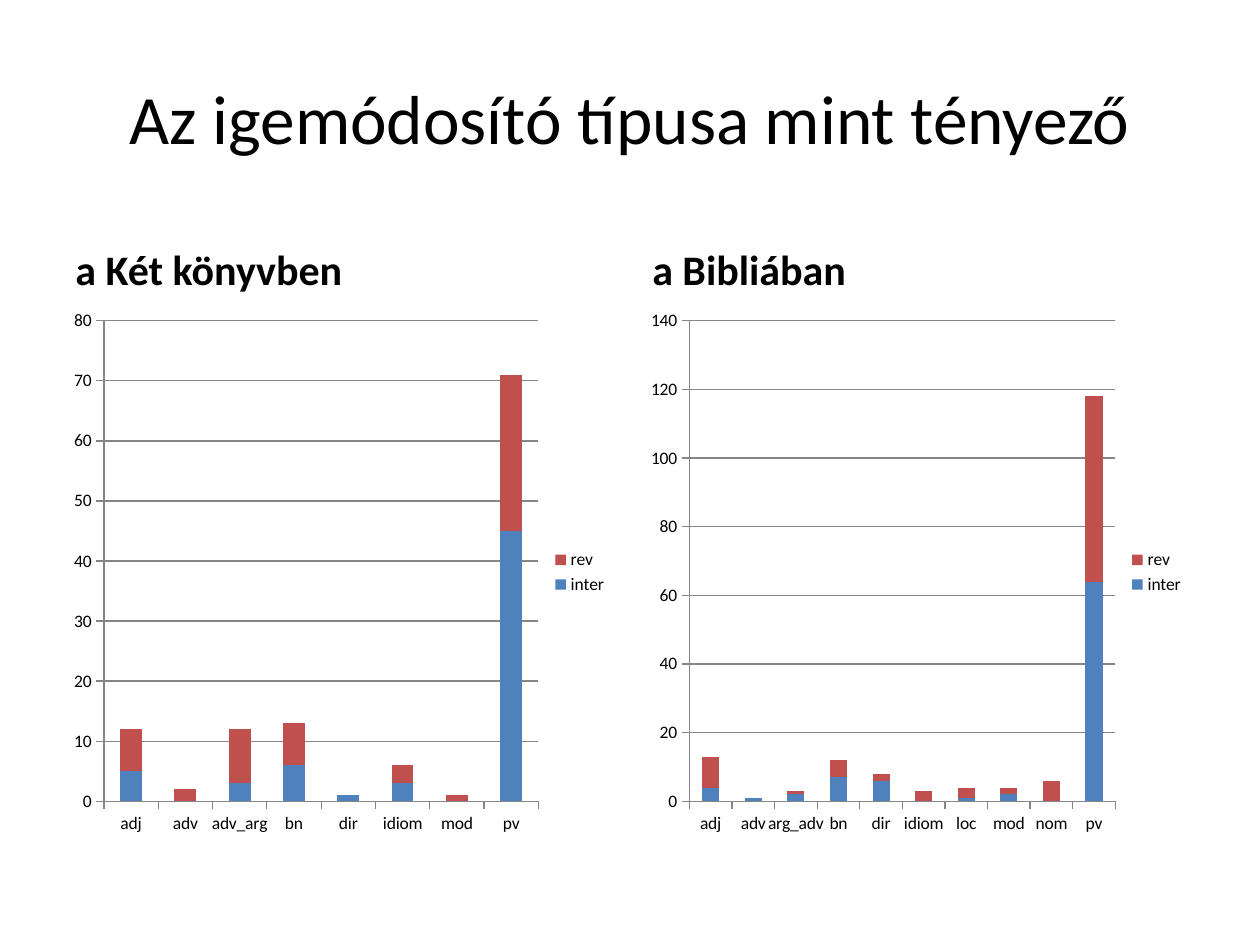
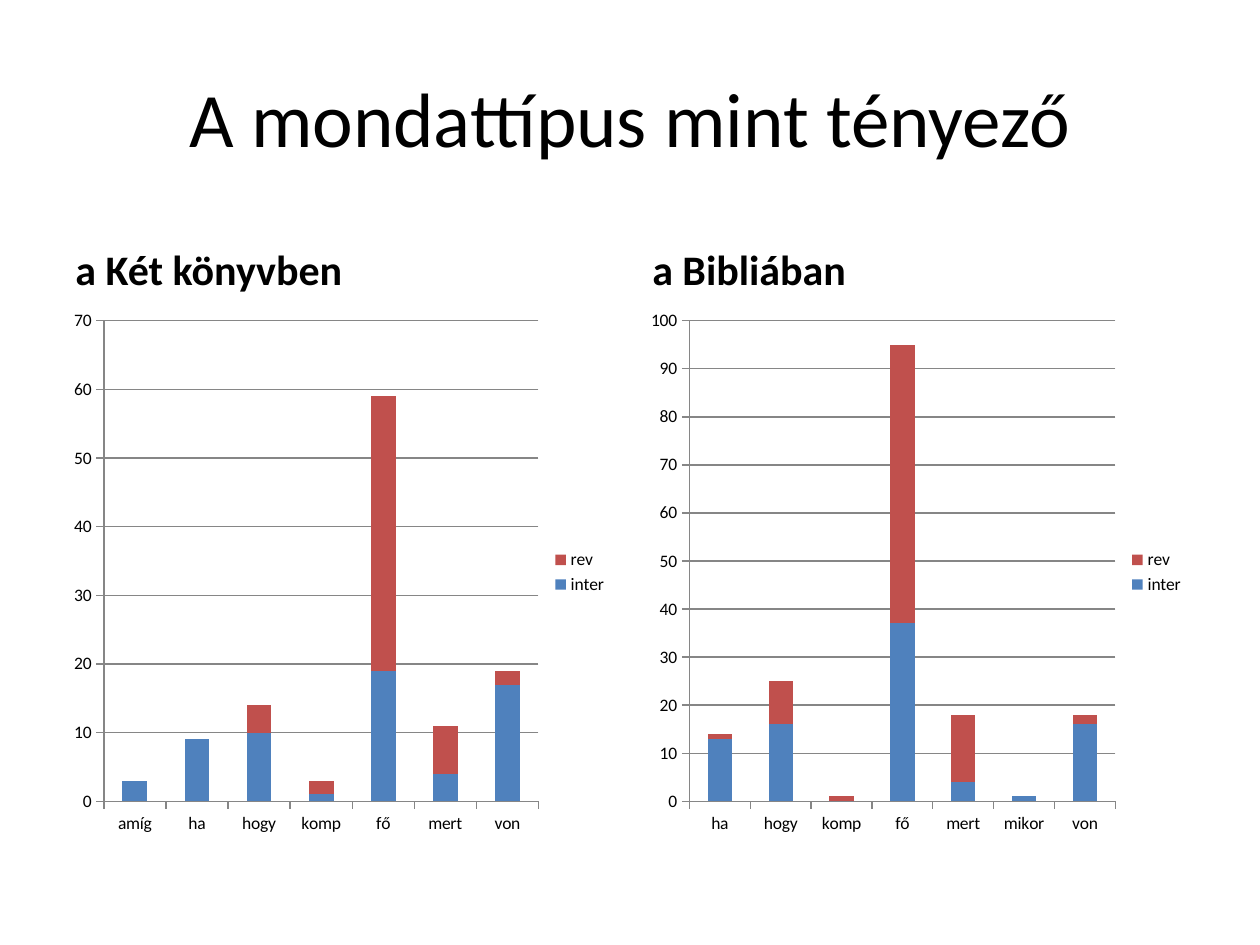
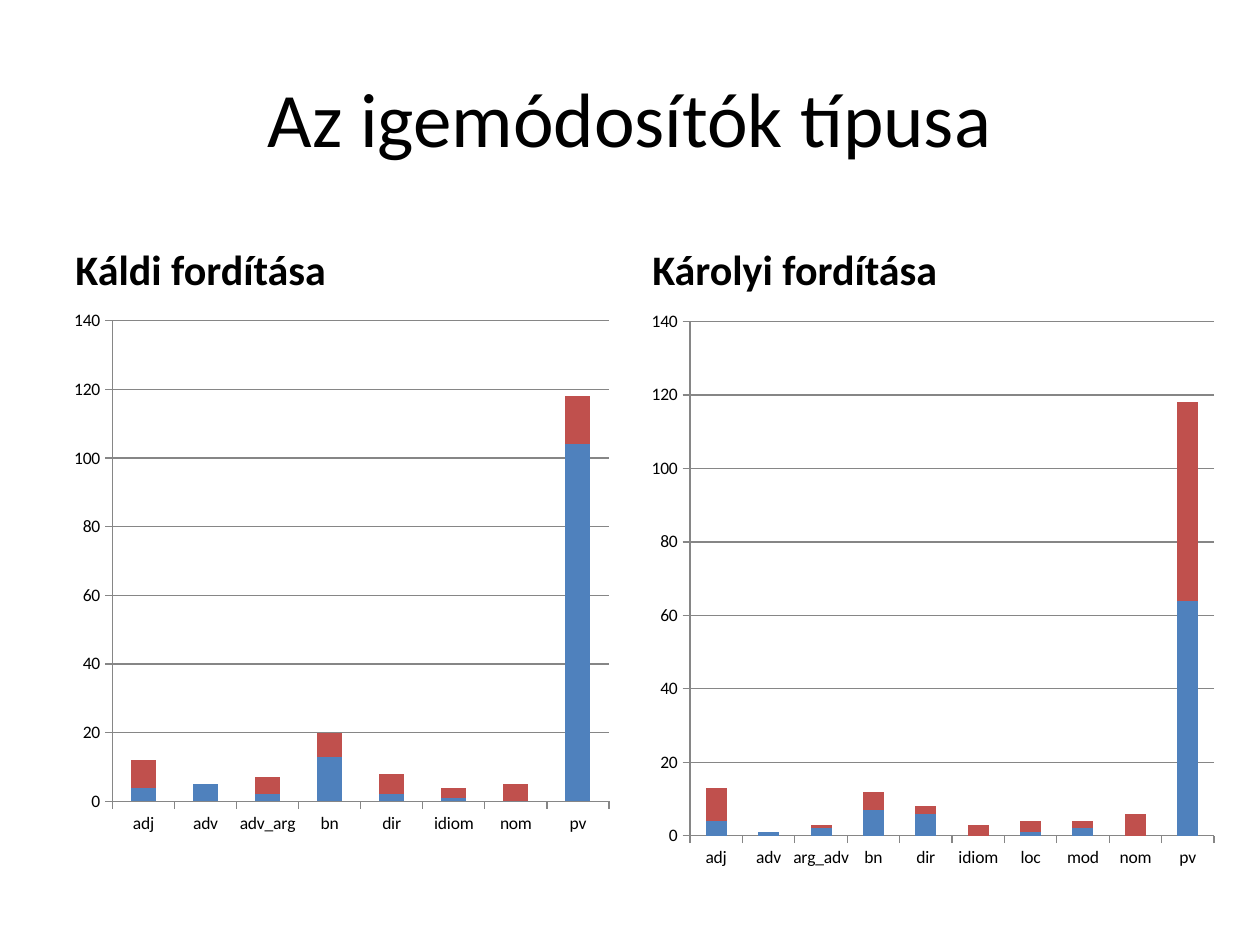
from collections import namedtuple

from pptx import Presentation
from pptx.chart.data import CategoryChartData
from pptx.dml.color import RGBColor
from pptx.enum.chart import XL_CHART_TYPE, XL_LEGEND_POSITION, XL_TICK_MARK
from pptx.enum.text import MSO_ANCHOR, PP_ALIGN
from pptx.util import Cm, Pt

STACKED = XL_CHART_TYPE.COLUMN_STACKED
LEGEND_RIGHT = XL_LEGEND_POSITION.RIGHT
TICK_OUT, TICK_NONE = XL_TICK_MARK.OUTSIDE, XL_TICK_MARK.NONE
MIDDLE, BOTTOM = MSO_ANCHOR.MIDDLE, MSO_ANCHOR.BOTTOM
LEFT, CENTER = PP_ALIGN.LEFT, PP_ALIGN.CENTER

FONT = "Calibri"
COLORS = {"text": "000000", "axis": "868686", "first": "4F81BD", "second": "C0504D"}

Box = namedtuple("Box", "left top width height")
Panel = namedtuple("Panel", "heading categories first second box")

SLIDE_WIDTH, SLIDE_HEIGHT = 25.4, 19.05
MARGIN = 1.27
COLUMN_WIDTH = 11.23
HEADING_HEIGHT = 1.78
TITLE_BOX = Box(MARGIN, 0.76, SLIDE_WIDTH - 2 * MARGIN, 3.18)
LEFT_BOX = Box(MARGIN, 4.27, COLUMN_WIDTH, 12.75)
RIGHT_BOX = LEFT_BOX._replace(left=SLIDE_WIDTH - MARGIN - COLUMN_WIDTH)
WIDE_RIGHT_BOX = RIGHT_BOX._replace(width=11.81, height=13.46)

TRANSLATION_TYPES = ["adj", "adv", "arg_adv", "bn", "dir", "idiom", "loc", "mod", "nom", "pv"]
TRANSLATION_FIRST = [4, 1, 2, 7, 6, 0, 1, 2, 0, 64]
TRANSLATION_SECOND = [9, 0, 1, 5, 2, 3, 3, 2, 6, 54]

SLIDES = [
    ("Az igemódosító típusa mint tényező", 39.6, ("inter", "rev"), True, [
        Panel("a Két könyvben",
              ["adj", "adv", "adv_arg", "bn", "dir", "idiom", "mod", "pv"],
              [5, 0, 3, 6, 1, 3, 0, 45], [7, 2, 9, 7, 0, 3, 1, 26], LEFT_BOX),
        Panel("a Bibliában", TRANSLATION_TYPES,
              TRANSLATION_FIRST, TRANSLATION_SECOND, RIGHT_BOX),
    ]),
    ("A mondattípus mint tényező", 44, ("inter", "rev"), True, [
        Panel("a Két könyvben",
              ["amíg", "ha", "hogy", "komp", "fő", "mert", "von"],
              [3, 9, 10, 1, 19, 4, 17], [0, 0, 4, 2, 40, 7, 2], LEFT_BOX),
        Panel("a Bibliában",
              ["ha", "hogy", "komp", "fő", "mert", "mikor", "von"],
              [13, 16, 0, 37, 4, 1, 16], [1, 9, 1, 58, 14, 0, 2], RIGHT_BOX),
    ]),
    ("Az igemódosítók típusa", 44, ("Series 1", "Series 2"), False, [
        Panel("Káldi fordítása",
              ["adj", "adv", "adv_arg", "bn", "dir", "idiom", "nom", "pv"],
              [4, 5, 2, 13, 2, 1, 0, 104], [8, 0, 5, 7, 6, 3, 5, 14], LEFT_BOX),
        Panel("Károlyi fordítása", TRANSLATION_TYPES,
              TRANSLATION_FIRST, TRANSLATION_SECOND, WIDE_RIGHT_BOX),
    ]),
]


def color(key):
    return RGBColor.from_string(COLORS[key])


def in_cm(box):
    return [Cm(length) for length in box]


def style_font(font, size, bold=False):
    font.name, font.size, font.bold = FONT, Pt(size), bold
    font.color.rgb = color("text")


def add_text(slide, box, text, size, bold=False, align=LEFT, anchor=BOTTOM):
    frame = slide.shapes.add_textbox(*in_cm(box)).text_frame
    frame.word_wrap = True
    frame.vertical_anchor = anchor
    line = frame.paragraphs[0]
    line.text = text
    line.alignment = align
    style_font(line.font, size, bold)


def style_line(line):
    line.color.rgb = color("axis")
    line.width = Pt(0.75)


def add_counts(slide, box, panel, series_names, legend):
    counts = CategoryChartData()
    counts.categories = panel.categories
    for name, values in zip(series_names, (panel.first, panel.second)):
        counts.add_series(name, values)
    chart = slide.shapes.add_chart(STACKED, *in_cm(box), counts).chart
    style_font(chart.font, 10)
    chart.has_title = False
    chart.has_legend = legend
    if legend:
        chart.legend.position = LEGEND_RIGHT
        chart.legend.include_in_layout = False

    plot = chart.plots[0]
    plot.gap_width, plot.overlap, plot.vary_by_categories = 150, 100, False
    for series, key in zip(plot.series, ("first", "second")):
        series.format.fill.solid()
        series.format.fill.fore_color.rgb = color(key)

    for axis in (chart.category_axis, chart.value_axis):
        axis.major_tick_mark, axis.minor_tick_mark = TICK_OUT, TICK_NONE
        style_line(axis.format.line)
    chart.value_axis.has_major_gridlines = True
    style_line(chart.value_axis.major_gridlines.format.line)


def add_panel(slide, panel, series_names, legend):
    box = panel.box
    heading_box = box._replace(width=COLUMN_WIDTH, height=HEADING_HEIGHT)
    counts_box = box._replace(top=box.top + HEADING_HEIGHT,
                              height=box.height - HEADING_HEIGHT)
    add_text(slide, heading_box, panel.heading, 24, bold=True)
    add_counts(slide, counts_box, panel, series_names, legend)


def add_comparison(deck, title, title_size, series_names, legend, panels):
    slide = deck.slides.add_slide(deck.slide_layouts[6])
    add_text(slide, TITLE_BOX, title, title_size, align=CENTER, anchor=MIDDLE)
    for panel in panels:
        add_panel(slide, panel, series_names, legend)


def main():
    deck = Presentation()
    deck.slide_width, deck.slide_height = Cm(SLIDE_WIDTH), Cm(SLIDE_HEIGHT)
    for content in SLIDES:
        add_comparison(deck, *content)
    deck.save("out.pptx")


if __name__ == "__main__":
    main()
